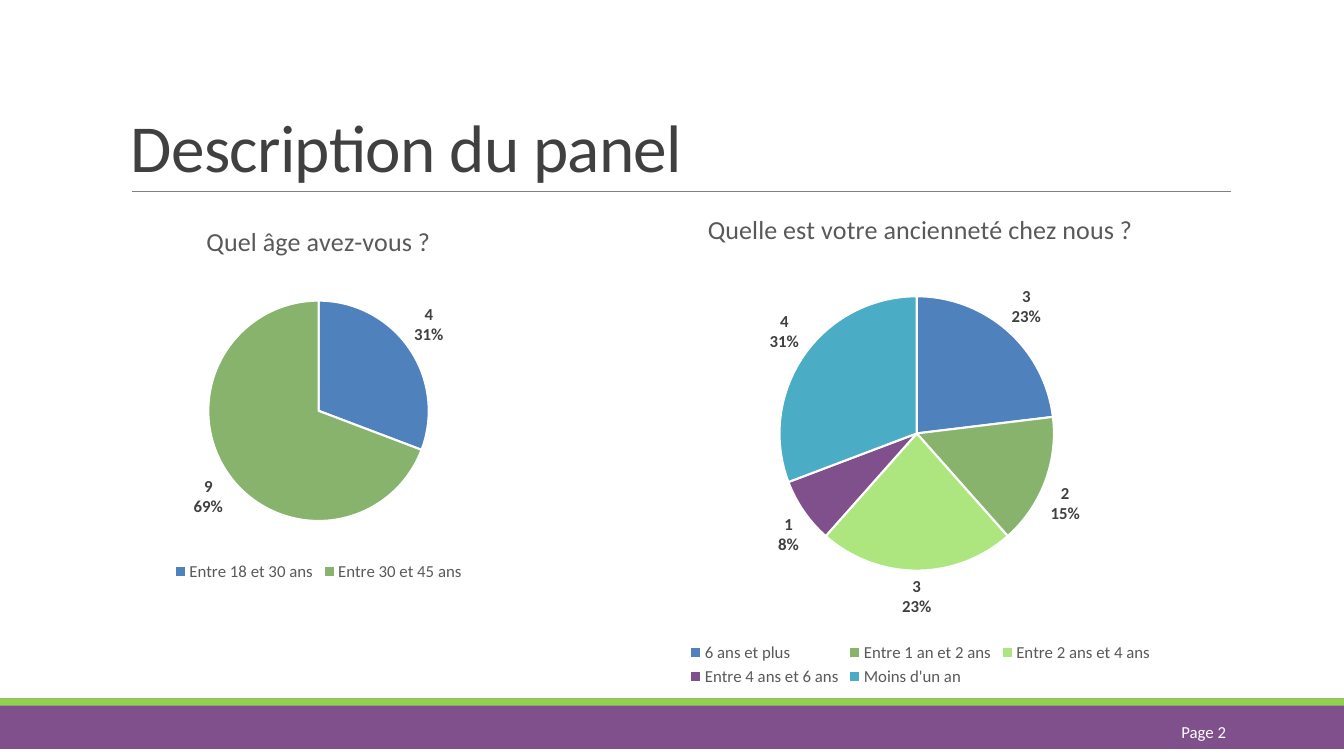
import pptx
import pptx.chart.data
import pptx.dml.color
import pptx.enum.chart
import pptx.enum.shapes
import pptx.enum.text
import pptx.oxml
import pptx.oxml.ns
import pptx.util

WIDTH, HEIGHT = 13.33, 7.5
FONT = "Calibri"
PURPLE, GREEN, GREY = "7F508B", "92D050", "595959"
SLICES = ["4F81BD", "88B36D", "ADE67F", PURPLE, "4BACC6"]
BAND_TOP = 6.93


def color(value):
    return pptx.dml.color.RGBColor.from_string(value)


def box(left, top, width, height):
    return [pptx.util.Inches(length) for length in (left, top, width, height)]


def set_font(font, size, value, bold=False):
    font.name = FONT
    font.size = pptx.util.Pt(size)
    font.color.rgb = color(value)
    font.bold = bold


def add_band(slide, height, fill):
    band = slide.shapes.add_shape(
        pptx.enum.shapes.MSO_SHAPE.RECTANGLE, *box(0, BAND_TOP, WIDTH, height))
    band.shadow.inherit = False
    band.fill.solid()
    band.fill.fore_color.rgb = color(fill)
    band.line.fill.background()


def add_rule(slide, left, right, top):
    rule = slide.shapes.add_connector(
        pptx.enum.shapes.MSO_CONNECTOR.STRAIGHT, *box(left, top, right, top))
    rule.line.color.rgb = color("808080")
    rule.line.width = pptx.util.Pt(0.5)
    rule._element.spPr.append(pptx.oxml.parse_xml(
        f"<a:effectLst {pptx.oxml.ns.nsdecls('a')}/>"))


def add_text(slide, place, wording, size, value, anchor, align):
    frame = slide.shapes.add_textbox(*box(*place)).text_frame
    frame.word_wrap = True
    frame.vertical_anchor = anchor
    paragraph = frame.paragraphs[0]
    paragraph.text = wording
    paragraph.alignment = align
    set_font(paragraph.font, size, value)
    return paragraph


def place_plot(chart, x, y, w, h):
    area = chart._chartSpace.chart.plotArea
    for layout in area.findall(pptx.oxml.ns.qn("c:layout")):
        area.remove(layout)
    area.insert(0, pptx.oxml.parse_xml(
        f"<c:layout {pptx.oxml.ns.nsdecls('c')}><c:manualLayout>"
        '<c:layoutTarget val="inner"/><c:xMode val="edge"/><c:yMode val="edge"/>'
        f'<c:x val="{x}"/><c:y val="{y}"/><c:w val="{w}"/><c:h val="{h}"/>'
        "</c:manualLayout></c:layout>"))


def label_slices(series):
    labels = series.data_labels
    labels.show_value = True
    labels.show_percentage = True
    labels.position = pptx.enum.chart.XL_LABEL_POSITION.OUTSIDE_END
    set_font(labels.font, 12, "404040", bold=True)
    separator = pptx.oxml.parse_xml(
        f"<c:separator {pptx.oxml.ns.nsdecls('c')}>\n</c:separator>")
    labels._element.find(pptx.oxml.ns.qn("c:showBubbleSize")).addnext(separator)


def add_pie(slide, place, plot_share, question, answers):
    data = pptx.chart.data.CategoryChartData()
    data.categories = list(answers)
    data.add_series(question, list(answers.values()))
    chart = slide.shapes.add_chart(
        pptx.enum.chart.XL_CHART_TYPE.PIE, *box(*place), data).chart
    set_font(chart.font, 10, "000000")

    chart.has_title = True
    title = chart.chart_title.text_frame
    title.text = question
    set_font(title.paragraphs[0].font, 18.6, GREY)
    chart.chart_title.include_in_layout = False

    chart.has_legend = True
    chart.legend.position = pptx.enum.chart.XL_LEGEND_POSITION.BOTTOM
    chart.legend.include_in_layout = False
    set_font(chart.legend.font, 12, GREY)

    plot = chart.plots[0]
    plot.vary_by_categories = True
    series = plot.series[0]
    for index, fill in enumerate(SLICES[:len(answers)]):
        slice_format = series.points[index].format
        slice_format.fill.solid()
        slice_format.fill.fore_color.rgb = color(fill)
        slice_format.line.color.rgb = color("FFFFFF")
        slice_format.line.width = pptx.util.Pt(1.5)
    label_slices(series)
    place_plot(chart, *plot_share)


def main():
    deck = pptx.Presentation()
    deck.slide_width = pptx.util.Inches(WIDTH)
    deck.slide_height = pptx.util.Inches(HEIGHT)
    slide = deck.slides.add_slide(deck.slide_layouts[6])
    anchors = pptx.enum.text.MSO_ANCHOR
    aligns = pptx.enum.text.PP_ALIGN

    add_band(slide, 0.5, PURPLE)
    add_band(slide, 0.07, GREEN)
    add_rule(slide, 1.31, 12.21, 1.9)
    heading = add_text(slide, (1.2, 0.31, 11, 1.59), "Description du panel",
                       48, "404040", anchors.BOTTOM, aligns.LEFT)
    heading.line_spacing = 0.85
    heading.runs[0]._r.get_or_add_rPr().set("spc", "-50")
    add_text(slide, (10.83, 7.06, 1.43, 0.4), "Page 2",
             12, "FFFFFF", anchors.MIDDLE, aligns.RIGHT)

    add_pie(slide, (1.2, 2.04, 3.92, 3.77), (0.22, 0.25, 0.56, 0.58),
            "Quel âge avez-vous ?",
            {"Entre 18 et 30 ans": 4, "Entre 30 et 45 ans": 9})
    add_pie(slide, (5.37, 1.9, 7.52, 4.95), (0.31, 0.21, 0.37, 0.55),
            "Quelle est votre ancienneté chez nous ?",
            {"6 ans et plus": 3, "Entre 1 an et 2 ans": 2,
             "Entre 2 ans et 4 ans": 3, "Entre 4 ans et 6 ans": 1,
             "Moins d'un an": 4})

    deck.save("out.pptx")


if __name__ == "__main__":
    main()
